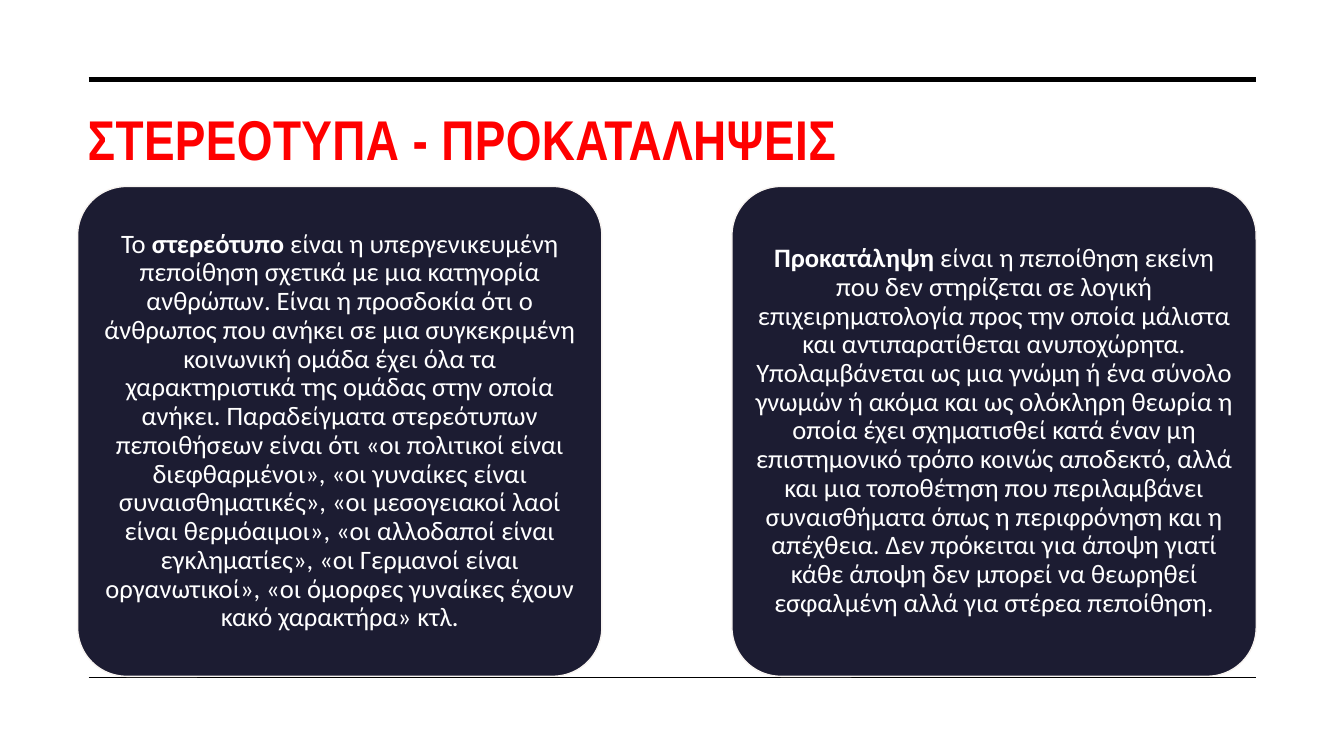
from lxml.etree import SubElement
from pptx import Presentation
from pptx.dml.color import RGBColor
from pptx.enum.shapes import MSO_CONNECTOR as Line, MSO_SHAPE as Shape
from pptx.enum.text import MSO_ANCHOR as Anchor, MSO_AUTO_SIZE as AutoSize, PP_ALIGN as Align
from pptx.oxml.ns import qn
from pptx.util import Inches, Pt

BLACK = RGBColor(0x00, 0x00, 0x00)
RED = RGBColor(0xFF, 0x00, 0x00)
WHITE = RGBColor(0xFF, 0xFF, 0xFF)
NAVY = RGBColor(0x1C, 0x1C, 0x32)
CREAM = RGBColor(0xF8, 0xF4, 0xF1)

LEFT, RIGHT = 0.77, 12.46
RULE_LEFT = 0.88
CARD_TOP, CARD_WIDTH, CARD_HEIGHT = 1.85, 5.2, 4.86
CARD_STEP = RIGHT - LEFT - CARD_WIDTH

RULES = [(0.79, 3.5), (6.72, 1)]
DEFINITIONS = [
    [
        ("Το ", False),
        ("στερεότυπο", True),
        (" είναι η υπεργενικευμένη πεποίθηση σχετικά με μια κατηγορία ανθρώπων. "
         "Είναι η προσδοκία ότι ο άνθρωπος που ανήκει σε μια συγκεκριμένη κοινωνική ομάδα έχει "
         "όλα τα χαρακτηριστικά της ομάδας στην οποία ανήκει. Παραδείγματα στερεότυπων "
         "πεποιθήσεων είναι ότι «οι πολιτικοί είναι διεφθαρμένοι», «οι γυναίκες είναι "
         "συναισθηματικές», «οι μεσογειακοί λαοί είναι θερμόαιμοι», «οι αλλοδαποί είναι "
         "εγκληματίες», «οι Γερμανοί είναι οργανωτικοί», «οι όμορφες γυναίκες έχουν "
         "κακό χαρακτήρα» κτλ.", False),
    ],
    [
        ("Προκατάληψη", True),
        (" είναι η πεποίθηση εκείνη που δεν στηρίζεται σε λογική επιχειρηματολογία προς την "
         "οποία μάλιστα και αντιπαρατίθεται ανυποχώρητα. Υπολαμβάνεται ως μια γνώμη ή ένα "
         "σύνολο γνωμών ή ακόμα και ως ολόκληρη θεωρία η οποία έχει σχηματισθεί κατά έναν μη "
         "επιστημονικό τρόπο κοινώς αποδεκτό, αλλά και μια τοποθέτηση που περιλαμβάνει "
         "συναισθήματα όπως η περιφρόνηση και η απέχθεια. Δεν πρόκειται για άποψη γιατί κάθε "
         "άποψη δεν μπορεί να θεωρηθεί εσφαλμένη αλλά για στέρεα πεποίθηση.", False),
    ],
]


def write(frame, parts, font, size, color, align, anchor, line_spacing=1.0, tracking=0):
    frame.word_wrap = True
    frame.auto_size = AutoSize.NONE
    frame.vertical_anchor = anchor
    paragraph = frame.paragraphs[0]
    paragraph.alignment = align
    paragraph.line_spacing = line_spacing
    for text, bold in parts:
        run = paragraph.add_run()
        run.text = text
        run.font.name = font
        run.font.size = Pt(size)
        run.font.bold = bold
        run.font.color.rgb = color
        if tracking:
            run.font._element.set("spc", str(round(tracking * 100)))


deck = Presentation()
deck.slide_width, deck.slide_height = Inches(13.33), Inches(7.5)
slide = deck.slides.add_slide(deck.slide_layouts[5])

for height, weight in RULES:
    rule = slide.shapes.add_connector(
        Line.STRAIGHT, Inches(RULE_LEFT), Inches(height), Inches(RIGHT), Inches(height))
    rule.line.color.rgb = BLACK
    rule.line.width = Pt(weight)
    SubElement(rule._element.spPr, qn("a:effectLst"))

heading = slide.shapes.title
heading.left, heading.top = Inches(LEFT), Inches(0.99)
heading.width, heading.height = Inches(RIGHT - LEFT), Inches(1.26)
write(heading.text_frame, [("ΣΤΕΡΕΟΤΥΠΑ - ΠΡΟΚΑΤΑΛΗΨΕΙΣ", True)], font="Arial Narrow",
      size=40, color=RED, align=Align.LEFT, anchor=Anchor.TOP, tracking=0.3)

for column, definition in enumerate(DEFINITIONS):
    card = slide.shapes.add_shape(
        Shape.ROUNDED_RECTANGLE, Inches(LEFT + column * CARD_STEP), Inches(CARD_TOP),
        Inches(CARD_WIDTH), Inches(CARD_HEIGHT))
    card.adjustments[0] = 0.1
    card.shadow.inherit = False
    card.fill.solid()
    card.fill.fore_color.rgb = NAVY
    card.line.color.rgb = CREAM
    card.line.width = Pt(1)
    frame = card.text_frame
    frame.margin_left = frame.margin_right = Inches(0.04)
    frame.margin_top = frame.margin_bottom = Inches(0.03)
    write(frame, definition, font="Calibri", size=19, color=WHITE,
          align=Align.CENTER, anchor=Anchor.MIDDLE, line_spacing=0.9)

deck.save("out.pptx")
